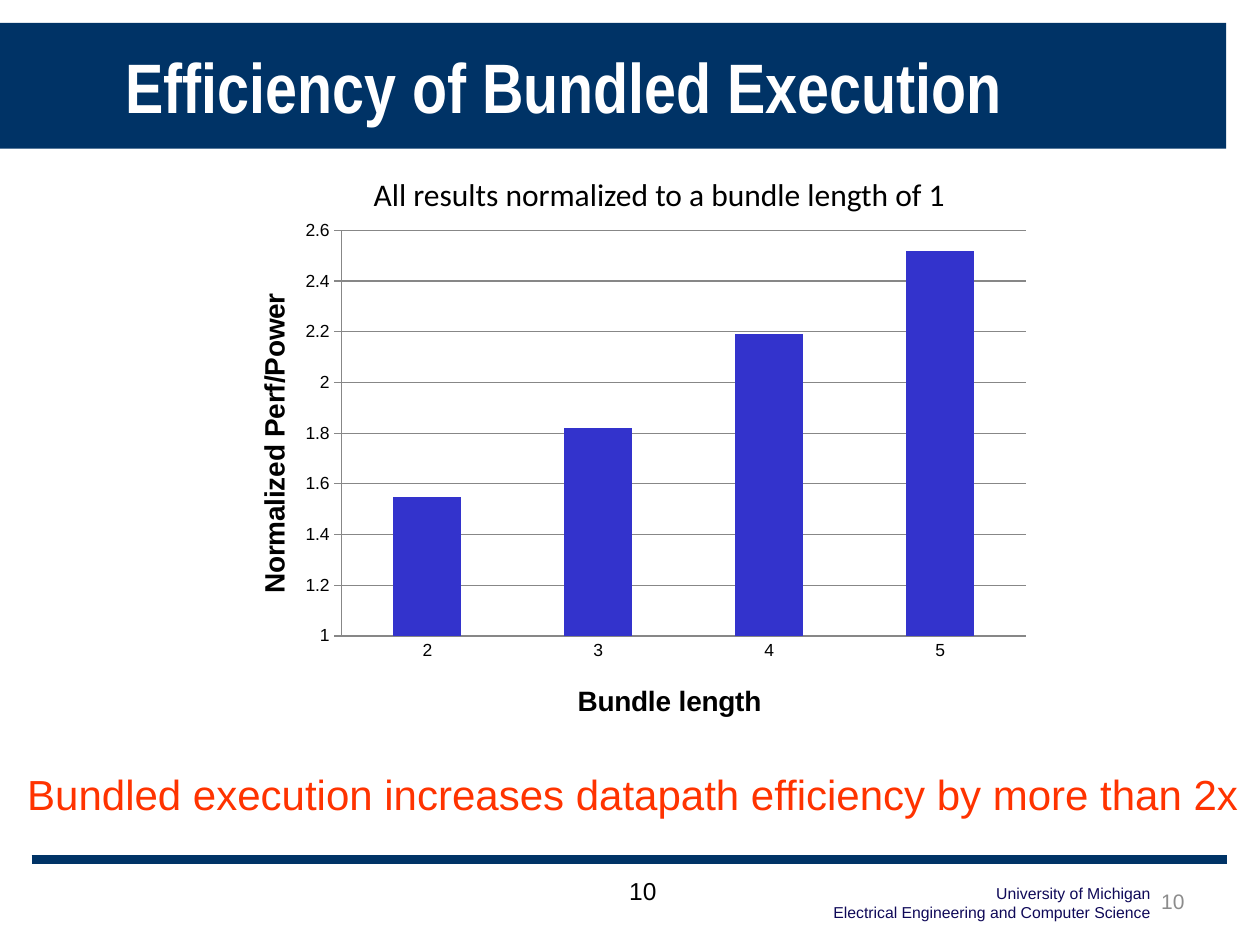
from pptx import Presentation
from pptx.chart.data import CategoryChartData
from pptx.dml.color import RGBColor
from pptx.enum.chart import XL_CHART_TYPE as ChartType, XL_TICK_MARK as Tick
from pptx.enum.shapes import MSO_CONNECTOR as Connector, MSO_SHAPE as Shape
from pptx.enum.text import MSO_ANCHOR as Anchor, PP_ALIGN as Align
from pptx.oxml import parse_xml
from pptx.oxml.ns import nsdecls, qn
from pptx.util import Cm, Pt

NAVY = "003366"
GRAY = "878787"


def color(value):
    return RGBColor.from_string(value)


def set_font(font, hex_color, **values):
    for name, value in values.items():
        setattr(font, name, value)
    font.color.rgb = color(hex_color)


def add_text(slide, box, lines, size, hex_color, font="Arial", align=Align.CENTER,
             anchor=Anchor.TOP, wrap=True, bold=False):
    shape = slide.shapes.add_textbox(*map(Cm, box))
    frame = shape.text_frame
    for name, value in {"word_wrap": wrap, "vertical_anchor": anchor}.items():
        setattr(frame, name, value)
    frame.text = "\n".join(lines)
    for paragraph in frame.paragraphs:
        paragraph.alignment = align
        set_font(paragraph.font, hex_color, name=font, size=Pt(size), bold=bold)


def add_band(slide, box, hex_color):
    shape = slide.shapes.add_shape(Shape.RECTANGLE, *map(Cm, box))
    shape.shadow.inherit = False
    shape.fill.solid()
    shape.fill.fore_color.rgb = color(hex_color)
    shape.line.fill.background()


def add_rule(slide, ends, hex_color, width):
    connector = slide.shapes.add_connector(Connector.STRAIGHT, *map(Cm, ends))
    connector.line.color.rgb = color(hex_color)
    connector.line.width = Pt(width)
    properties = connector._element.find(qn("p:spPr"))
    properties.append(parse_xml(f"<a:effectLst {nsdecls('a')}/>"))


def manual_layout(target, **values):
    modes = {"xMode": "edge", "yMode": "edge"}
    if target is not None:
        modes = {"layoutTarget": target, **modes}
    items = "".join(f'<c:{name} val="{value}"/>' for name, value in {**modes, **values}.items())
    return parse_xml(f"<c:layout {nsdecls('c')}><c:manualLayout>{items}</c:manualLayout></c:layout>")


def remove_layout(element):
    for layout in element.findall(qn("c:layout")):
        element.remove(layout)


def format_axis(axis, title, x, y, tick):
    axis.has_title = True
    frame = axis.axis_title.text_frame
    frame.text = title
    set_font(frame.paragraphs[0].runs[0].font, "000000", name="Arial", size=Pt(16), bold=True)
    element = axis.axis_title._element
    remove_layout(element)
    element.find(qn("c:tx")).addnext(manual_layout(None, x=x, y=y))
    axis.major_tick_mark = tick
    axis.minor_tick_mark = Tick.NONE
    axis.format.line.color.rgb = color(GRAY)


def add_column_chart(slide, box, categories, values):
    data = CategoryChartData()
    data.categories = categories
    data.add_series("Series 1", values)
    chart = slide.shapes.add_chart(ChartType.COLUMN_CLUSTERED, *map(Cm, box), data).chart
    chart.has_legend = False
    chart.has_title = False
    set_font(chart.font, "000000", name="Arial", size=Pt(10))
    plot = chart.plots[0]
    plot.vary_by_categories = False
    plot.gap_width = 150
    fill = plot.series[0].format.fill
    fill.solid()
    fill.fore_color.rgb = color("3333CC")

    format_axis(chart.category_axis, "Bundle length", 0.43, 0.89, Tick.NONE)
    value_axis = chart.value_axis
    format_axis(value_axis, "Normalized Perf/Power", 0.04, 0.15, Tick.CROSS)
    scale = {"minimum_scale": 1, "maximum_scale": 2.6, "major_unit": 0.2,
             "has_major_gridlines": True}
    for name, value in scale.items():
        setattr(value_axis, name, value)
    value_axis.major_gridlines.format.line.color.rgb = color(GRAY)
    value_axis.tick_labels.number_format = "General"
    value_axis.tick_labels.number_format_is_linked = False

    area = chart._chartSpace.chart.plotArea
    remove_layout(area)
    area.insert(0, manual_layout("inner", x=0.15, y=0.04, w=0.83, h=0.77))


def main():
    presentation = Presentation()
    presentation.slide_width, presentation.slide_height = Cm(25.4), Cm(19.05)
    slide = presentation.slides.add_slide(presentation.slide_layouts[6])

    add_band(slide, (-0.02, 0.46, 24.74, 2.54), NAVY)
    add_text(slide, (16.54, 17.7, 6.9, 1.02),
             ["University of Michigan", "Electrical Engineering and Computer Science"],
             9, "0F0958", align=Align.RIGHT, wrap=False)
    add_rule(slide, (0.64, 17.32, 24.74, 17.32), NAVY, 5)
    add_text(slide, (10, 17.53, 5.92, 1.32), ["10"], 14, "000000")
    add_text(slide, (0.56, 0.5, 21.6, 2.46), ["Efficiency of Bundled Execution"],
             40, "FFFFFF", font="Arial Narrow", anchor=Anchor.MIDDLE, bold=True)
    add_text(slide, (18.21, 17.65, 5.92, 1.02), ["10"], 12, "8C8C8C",
             align=Align.RIGHT, anchor=Anchor.MIDDLE)
    add_column_chart(slide, (4.4, 4.22, 16.61, 10.62),
                     ["2", "3", "4", "5"], [1.55, 1.82, 2.19, 2.52])
    add_text(slide, (5.61, 3.4, 15.37, 1.02),
             ["All results normalized to a bundle length of 1"], 18, "000000", font="Calibri")
    add_text(slide, (0.3, 15.37, 24.94, 1.27),
             ["Bundled execution increases datapath efficiency by more than 2x"],
             24, "FF3300", align=Align.LEFT, wrap=False)
    presentation.save("out.pptx")


if __name__ == "__main__":
    main()
